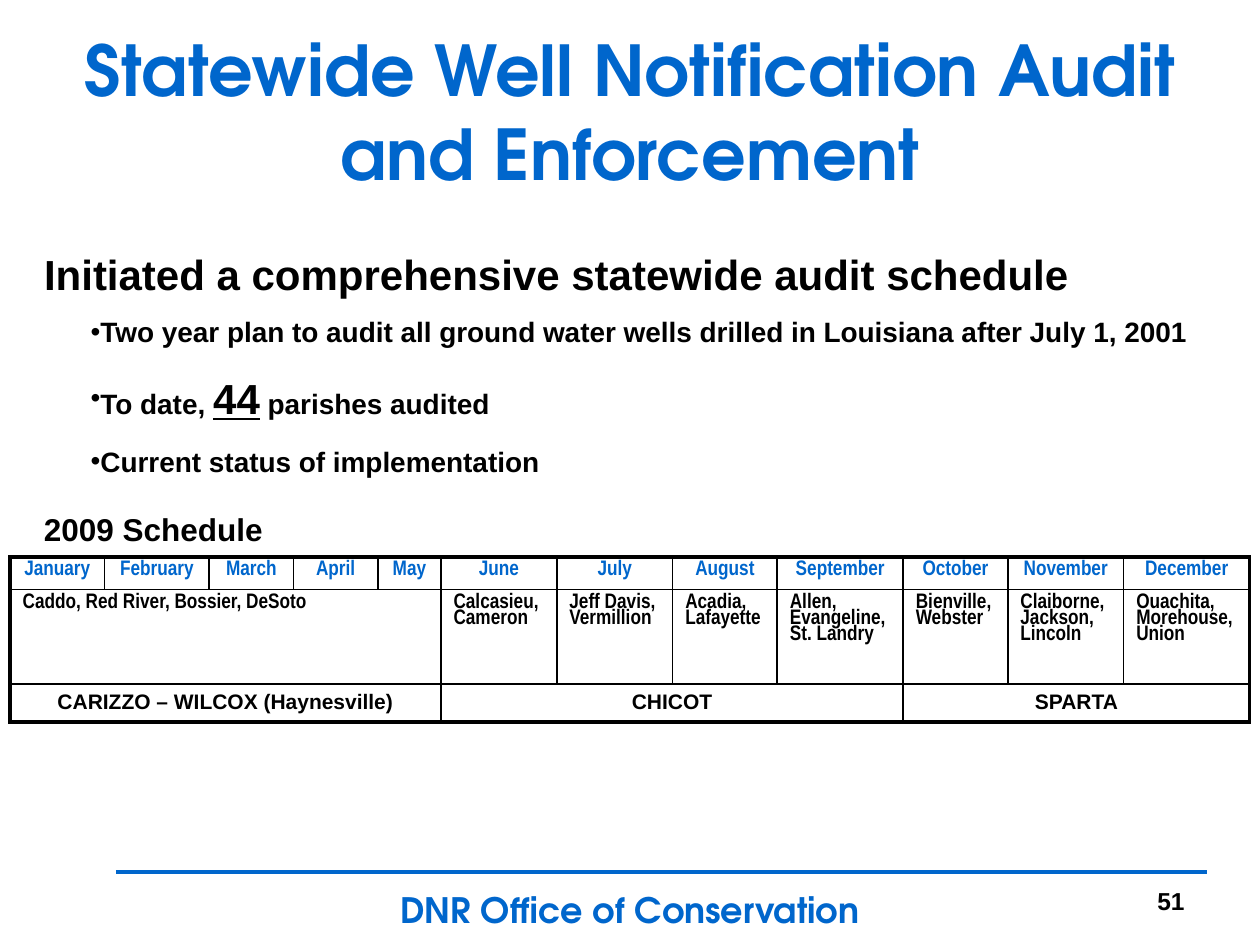
from lxml import etree
from pptx import Presentation
from pptx.dml.color import RGBColor
from pptx.enum.shapes import MSO_CONNECTOR
from pptx.enum.text import MSO_ANCHOR, MSO_AUTO_SIZE, PP_ALIGN
from pptx.oxml.ns import qn
from pptx.util import Inches, Pt

BLUE = RGBColor(0x00, 0x66, 0xCC)
BLACK = RGBColor(0, 0, 0)
DISPLAY_FONT = "TeX Gyre Adventor"
BODY_FONT = "Arial"
TABLE_FONT = "Arial Narrow"
LEFT, CENTER, RIGHT = PP_ALIGN.LEFT, PP_ALIGN.CENTER, PP_ALIGN.RIGHT
TOP, MIDDLE = MSO_ANCHOR.TOP, MSO_ANCHOR.MIDDLE
TITLE_AND_CONTENT = 1

OUTER_BORDER, INNER_BORDER = 2.25, 1
COLUMN_WIDTHS = [0.75, 0.83, 0.67, 0.67, 0.5, 0.92, 0.92, 0.83, 1, 0.83, 0.92, 1]
ROW_HEIGHTS = [0.25, 0.75, 0.25]
MONTHS = ["January", "February", "March", "April", "May", "June", "July",
          "August", "September", "October", "November", "December"]
# Each entry is the text and the number of months it spans.
PARISHES = [
    ("Caddo, Red River, Bossier, DeSoto", 5),
    ("Calcasieu, Cameron", 1),
    ("Jeff Davis, Vermillion", 1),
    ("Acadia, Lafayette", 1),
    ("Allen, Evangeline, St. Landry", 1),
    ("Bienville, Webster", 1),
    ("Claiborne, Jackson, Lincoln", 1),
    ("Ouachita, Morehouse, Union", 1),
]
AQUIFERS = [("CARIZZO – WILCOX (Haynesville)", 5), ("CHICOT", 4), ("SPARTA", 3)]
# Each entry is the space before and the runs of one bullet, as text and size.
BULLETS = [
    (9.2, [("Two year plan to audit all ground water wells drilled in "
            "Louisiana after July 1, 2001", 16)]),
    (13.8, [("To date, ", 16), ("44", 24), (" parishes audited", 16)]),
    (12.4, [("Current status of implementation", 16)]),
]


def place(shape, left, top, width, height):
    shape.left, shape.top = Inches(left), Inches(top)
    shape.width, shape.height = Inches(width), Inches(height)


def style_paragraph(paragraph, size, font=BODY_FONT, color=BLACK, align=LEFT):
    paragraph.alignment = align
    paragraph.space_before = Pt(0)
    paragraph.font.name = font
    paragraph.font.size = Pt(size)
    paragraph.font.bold = True
    paragraph.font.color.rgb = color


def add_label(slide, text, box, size, **style):
    shape = slide.shapes.add_textbox(*map(Inches, box))
    shape.text_frame.word_wrap = True
    shape.text_frame.text = text
    style_paragraph(shape.text_frame.paragraphs[0], size, **style)


def add_footer_line(slide):
    line = slide.shapes.add_connector(
        MSO_CONNECTOR.STRAIGHT, Inches(0.92), Inches(6.92), Inches(9.58), Inches(6.92))
    line.line.color.rgb = BLUE
    line.line.width = Pt(2)
    etree.SubElement(line._element.spPr, qn("a:effectLst"))


def fill_title(slide):
    title = slide.shapes.title
    place(title, 0.5, 0.25, 9, 1.25)
    frame = title.text_frame
    frame.text = "Statewide Well Notification Audit and Enforcement"
    frame.auto_size = MSO_AUTO_SIZE.NONE
    frame.vertical_anchor = MIDDLE
    style_paragraph(frame.paragraphs[0], 40, DISPLAY_FONT, BLUE, CENTER)


def set_bullet(paragraph, character=None):
    """Set a first-line bullet, or none when no character is given."""
    properties = paragraph._p.get_or_add_pPr()
    properties.set("marL", str(Inches(0.12 if character else 0)))
    properties.set("indent", str(Inches(0.25 if character else 0)))
    if character:
        etree.SubElement(properties, qn("a:buChar"), char=character)
    else:
        etree.SubElement(properties, qn("a:buNone"))


def fill_body(slide):
    body = slide.placeholders[1]
    place(body, 0.25, 1.92, 9.75, 1.95)
    frame = body.text_frame
    frame.auto_size = MSO_AUTO_SIZE.NONE
    frame.vertical_anchor = TOP
    frame.text = "Initiated a comprehensive statewide audit schedule"
    set_bullet(frame.paragraphs[0])
    style_paragraph(frame.paragraphs[0], 24)
    for space_before, runs in BULLETS:
        paragraph = frame.add_paragraph()
        paragraph.level = 1
        set_bullet(paragraph, "•")
        style_paragraph(paragraph, 16)
        paragraph.space_before = Pt(space_before)
        for text, size in runs:
            run = paragraph.add_run()
            run.text = text
            if size != 16:
                run.font.size = Pt(size)
                run.font.underline = True


def set_borders(cell, widths):
    """Draw black borders; widths are points for left, right, top and bottom."""
    properties = cell._tc.get_or_add_tcPr()
    for index, (side, width) in enumerate(zip("LRTB", widths)):
        line = etree.Element(qn(f"a:ln{side}"), w=str(Pt(width)))
        fill = etree.SubElement(line, qn("a:solidFill"))
        etree.SubElement(fill, qn("a:srgbClr"), val=str(BLACK))
        properties.insert(index, line)


def fill_row(table, row, entries, line_spacing=1.0, **style):
    last_row, last_column = len(ROW_HEIGHTS) - 1, len(COLUMN_WIDTHS) - 1
    column = 0
    for text, span in entries:
        end = column + span - 1
        cell = table.cell(row, column)
        if span > 1:
            cell.merge(table.cell(row, end))
        cell.text = text
        cell.vertical_anchor = TOP
        cell.fill.background()
        paragraph = cell.text_frame.paragraphs[0]
        style_paragraph(paragraph, 12, **style)
        paragraph.line_spacing = line_spacing
        on_edge = (column == 0, end == last_column, row == 0, row == last_row)
        set_borders(cell, [OUTER_BORDER if edge else INNER_BORDER for edge in on_edge])
        column = end + 1


def add_schedule(slide):
    table = slide.shapes.add_table(
        len(ROW_HEIGHTS), len(COLUMN_WIDTHS), Inches(0.08), Inches(4.42),
        Inches(sum(COLUMN_WIDTHS)), Inches(sum(ROW_HEIGHTS))).table
    table.first_row = False
    table.horz_banding = False
    for column, width in zip(table.columns, COLUMN_WIDTHS):
        column.width = Inches(width)
    for row, height in zip(table.rows, ROW_HEIGHTS):
        row.height = Inches(height)
    months = [(month, 1) for month in MONTHS]
    fill_row(table, 0, months, 0.8, font=TABLE_FONT, color=BLUE, align=CENTER)
    fill_row(table, 1, PARISHES, 0.8, font=TABLE_FONT)
    fill_row(table, 2, AQUIFERS, align=CENTER)


def main():
    presentation = Presentation()
    presentation.slide_width = Inches(10)
    presentation.slide_height = Inches(7.5)
    slide = presentation.slides.add_slide(presentation.slide_layouts[TITLE_AND_CONTENT])
    add_footer_line(slide)
    add_label(slide, "DNR Office of Conservation", (0, 7, 10, 0.43), 20,
              font=DISPLAY_FONT, color=BLUE, align=CENTER)
    add_label(slide, "51", (7.17, 6.98, 2.33, 0.52), 14, align=RIGHT)
    fill_title(slide)
    add_schedule(slide)
    fill_body(slide)
    add_label(slide, "2009 Schedule", (0.25, 4, 2, 0.4), 18)
    presentation.save("out.pptx")


if __name__ == "__main__":
    main()
